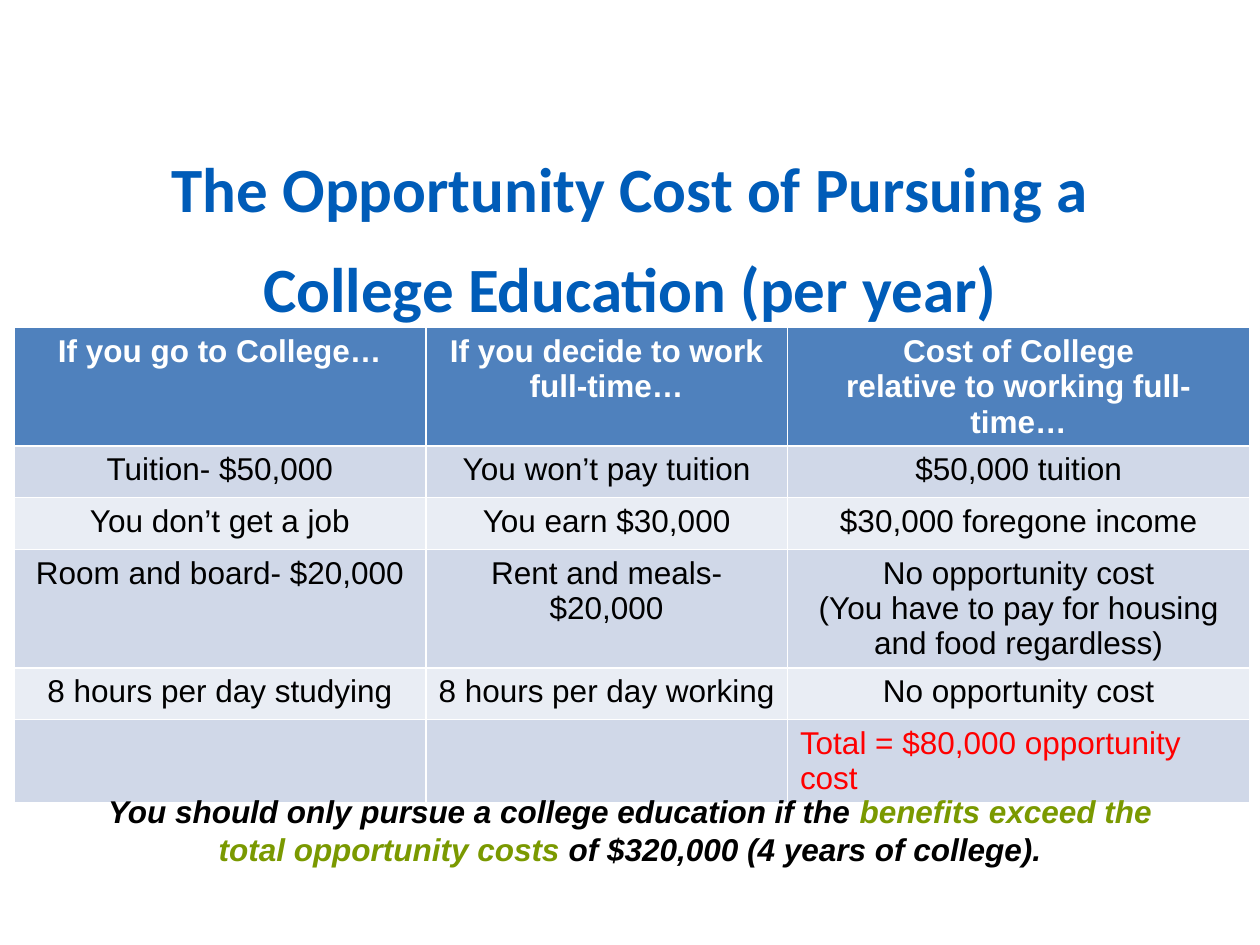
from dataclasses import dataclass

from pptx import Presentation
from pptx.dml.color import RGBColor as Rgb
from pptx.enum.text import MSO_ANCHOR as Anchor, PP_ALIGN as Align
from pptx.util import Inches, Pt


@dataclass(frozen=True)
class Theme:
    head: str = "Calibri"
    body: str = "Arial"
    big: int = 36
    text: int = 18
    lead: int = 57
    blue: str = "005CB8"
    green: str = "7A9900"
    red: str = "FF0000"
    black: str = "000000"
    white: str = "FFFFFF"
    top: str = "4F81BD"
    bands: tuple = ("D0D8E8", "E9EDF4")


T = Theme()
WIDE, HIGH = 10, 7.5
COLS = (3.27, 2.87, 3.67)
ROW = 0.41

# Each cell is a list of lines
ROWS = [
    [["If you go to College…"], ["If you decide to work full-time…"],
     ["Cost of College", "relative to working full-time…"]],
    [["Tuition- $50,000"], ["You won’t pay tuition"], ["$50,000 tuition"]],
    [["You don’t get a job"], ["You earn $30,000"],
     ["$30,000 foregone income"]],
    [["Room and board- $20,000"], ["Rent and meals- $20,000"],
     ["No opportunity cost",
      "(You have to pay for housing and food regardless)"]],
    [["8 hours per day studying"], ["8 hours per day working"],
     ["No opportunity cost"]],
    [[], [], ["Total = $80,000 opportunity cost"]],
]

CLOSE = [
    ("You should only pursue a college education if the ", T.black),
    ("benefits exceed the total opportunity costs", T.green),
    (" of $320,000 (4 years of college).", T.black),
]


def style(font, color, **form):
    """Set the font from format values over the body defaults."""
    base = {"name": T.body, "size": Pt(T.text), "bold": False}
    for key, value in {**base, **form}.items():
        setattr(font, key, value)
    font.color.rgb = Rgb.from_string(color)


def place(shape, *box):
    for key, value in zip(("left", "top", "width", "height"), box):
        setattr(shape, key, Inches(value))


def add_title(slide, text):
    shape = slide.shapes.title
    place(shape, 0.5, 1.16, WIDE - 1, 1.25)
    frame = shape.text_frame
    frame.text = text
    frame.vertical_anchor = Anchor.MIDDLE
    para = frame.paragraphs[0]
    para.alignment = Align.CENTER
    para.line_spacing = Pt(T.lead)
    style(para.runs[0].font, T.blue, name=T.head, size=Pt(T.big), bold=True)


def fill_cell(cell, lines, color, back, align, bold):
    cell.fill.solid()
    cell.fill.fore_color.rgb = Rgb.from_string(back)
    cell.text = "\n".join(lines)
    for para in cell.text_frame.paragraphs:
        para.alignment = align
        style(para.font, color, bold=bold)
        for run in para.runs:
            style(run.font, color, bold=bold)


def add_grid(slide):
    table = slide.shapes.add_table(
        len(ROWS), len(COLS), Inches(0.11), Inches(2.6),
        Inches(sum(COLS)), Inches(ROW * len(ROWS))).table
    for col, width in zip(table.columns, COLS):
        col.width = Inches(width)
    for r, row in enumerate(ROWS):
        first, last = r == 0, r == len(ROWS) - 1
        color = T.white if first else T.red if last else T.black
        back = T.top if first else T.bands[(r - 1) % 2]
        align = Align.LEFT if last else Align.CENTER
        for c, lines in enumerate(row):
            fill_cell(table.cell(r, c), lines, color, back, align, first)


def add_close(slide, parts):
    box = slide.shapes.add_textbox(0, 0, 0, 0)
    place(box, 0.54, 6.24, 8.92, 0.71)
    box.text_frame.word_wrap = True
    para = box.text_frame.paragraphs[0]
    para.alignment = Align.CENTER
    for text, color in parts:
        run = para.add_run()
        run.text = text
        style(run.font, color, bold=True, italic=True)


def main():
    deck = Presentation()
    deck.slide_width, deck.slide_height = Inches(WIDE), Inches(HIGH)
    slide = deck.slides.add_slide(deck.slide_layouts[5])
    add_title(slide, "The Opportunity Cost of Pursuing a "
                     "College Education (per year)")
    add_grid(slide)
    add_close(slide, CLOSE)
    deck.save("out.pptx")


if __name__ == "__main__":
    main()
